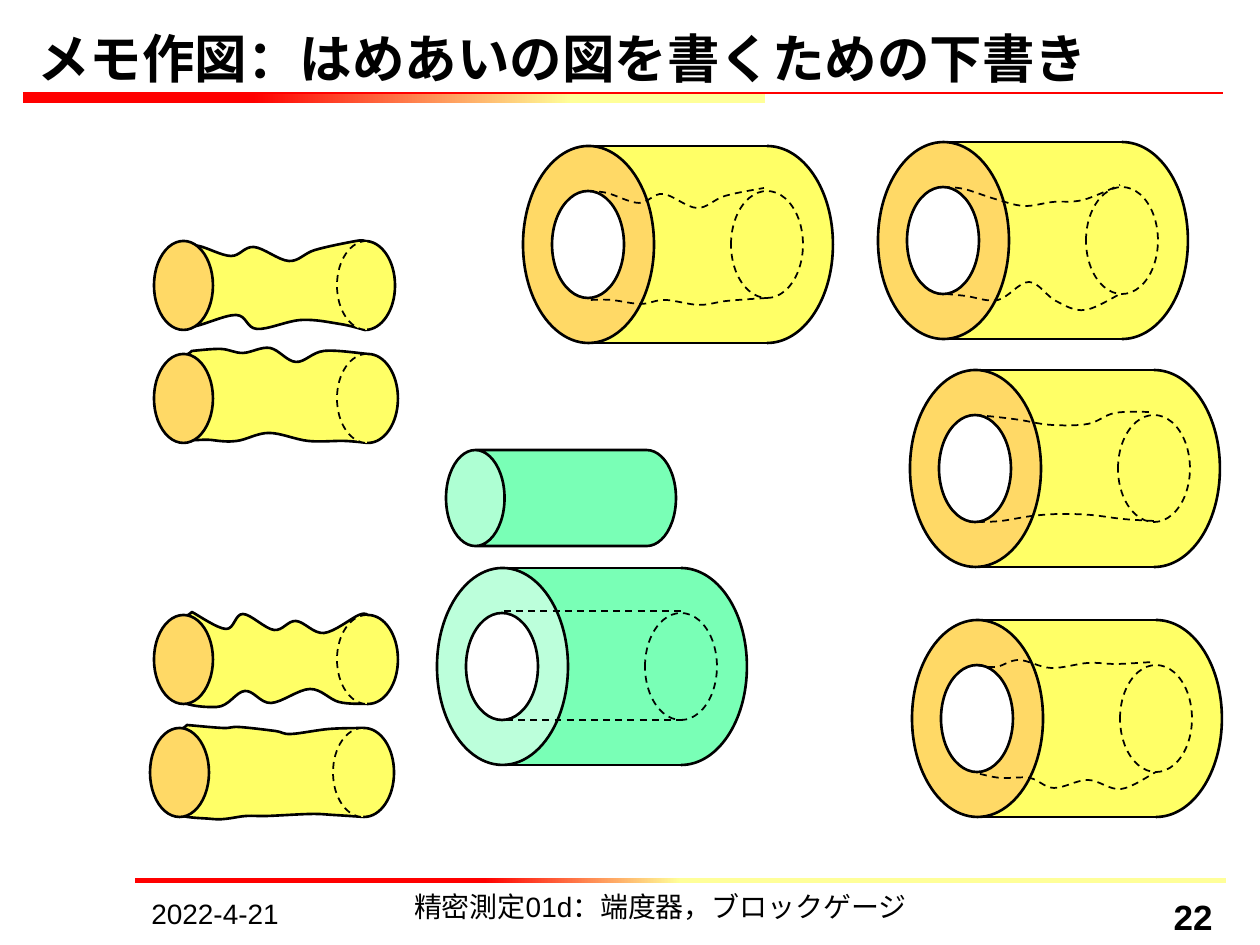
from lxml import etree
from pptx import Presentation
from pptx.dml.color import RGBColor
from pptx.enum.dml import MSO_LINE
from pptx.enum.shapes import MSO_CONNECTOR, MSO_SHAPE
from pptx.enum.text import MSO_ANCHOR, PP_ALIGN
from pptx.oxml.ns import qn
from pptx.util import Emu, Pt

PX = 914400 / 126
RECT, OVAL, CAN = MSO_SHAPE.RECTANGLE, MSO_SHAPE.OVAL, MSO_SHAPE.CAN
LEFT, MID, RIGHT = PP_ALIGN.LEFT, PP_ALIGN.CENTER, PP_ALIGN.RIGHT
TOP, BOTTOM = MSO_ANCHOR.TOP, MSO_ANCHOR.BOTTOM
DASH = MSO_LINE.DASH
BLACK, RED, PALE = "000000", "FF0000", "FFFF99"
YELLOW, AMBER = "FFFF66", "FFD966"
GREEN, MINT = "79FFB6", "BCFFDB"

# Rods: left, top, upper wave, lower wave (left to right, from the rod's corner)
RODS = [
    (154, 354,
     [(38, -3), (67, -5), (89, -1), (116, -6), (142, 8), (170, -3), (214, 0)],
     [(57, 86), (83, 87), (115, 79), (154, 87), (190, 87), (214, 89)]),
    (154, 615,
     [(38, -3), (72, 14), (89, -1), (120, 15), (142, 6), (170, 18), (205, 0), (214, 0)],
     [(63, 92), (91, 76), (117, 88), (156, 74), (185, 87), (214, 89)]),
    (150, 728,
     [(37, -3), (73, 0), (89, -1), (125, 3), (141, 6), (179, 1), (214, 0)],
     [(62, 91), (96, 88), (117, 88), (161, 86), (184, 87), (214, 89)]),
    (154, 241,
     [(25, 4), (45, 5), (77, 15), (100, 6), (135, 20), (161, 9), (202, 0), (211, 0)],
     [(37, 86), (82, 74), (103, 88), (147, 79), (186, 83), (211, 89)]),
]

# Sleeves: left, top, body, face, upper wave, lower wave
SLEEVES = [
    (523, 146, YELLOW, AMBER,
     [(64, 45), (84, 47), (116, 57), (140, 48), (174, 62), (202, 50), (241, 42)],
     [(68, 154), (88, 154), (118, 158), (142, 154), (176, 159), (204, 155), (244, 152)]),
    (912, 620, YELLOW, AMBER,
     [(64, 45), (84, 47), (107, 40), (139, 48), (176, 43), (205, 44), (241, 42)],
     [(68, 154), (89, 158), (118, 158), (142, 168), (176, 160), (209, 169), (244, 152)]),
    (910, 370, YELLOW, AMBER,
     [(65, 45), (86, 47), (110, 50), (141, 55), (178, 54), (205, 43), (241, 42)],
     [(68, 152), (91, 151), (122, 146), (150, 144), (181, 145), (213, 149), (244, 151)]),
    (878, 142, YELLOW, AMBER,
     [(65, 45), (86, 47), (117, 57), (146, 64), (175, 60), (205, 58), (242, 43)],
     [(68, 152), (88, 154), (120, 158), (151, 140), (178, 159), (207, 168), (244, 151)]),
    (437, 568, GREEN, MINT, [(67, 43), (244, 43)], [(69, 152), (246, 152)]),
]


def emu(px):
    return Emu(round(px * PX))


def rgb(code):
    return RGBColor.from_string(code)


def paint(shape, fill=None, width=None, dash=None):
    shape.shadow.inherit = False
    if fill:
        shape.fill.solid()
        shape.fill.fore_color.rgb = rgb(fill)
    else:
        shape.fill.background()
    if width:
        shape.line.color.rgb = rgb(BLACK)
        shape.line.width = Pt(width)
        if dash:
            shape.line.dash_style = dash
    else:
        shape.line.fill.background()


def draw(slide, kind, x, y, w, h, *look):
    shape = slide.shapes.add_shape(kind, emu(x), emu(y), emu(w), emu(h))
    paint(shape, *look)
    return shape


def rule(slide, x1, x2, y, color, width):
    line = slide.shapes.add_connector(
        MSO_CONNECTOR.STRAIGHT, emu(x1), emu(y), emu(x2), emu(y))
    line.line.color.rgb = rgb(color)
    line.line.width = Pt(width)
    etree.SubElement(line._element.spPr, qn("a:effectLst"))


def trace(slide, x, y, points, closed, *look):
    """Bezier outline: a start, then two handles and an end for each part."""
    dots = [(emu(x + a), emu(y + b)) for a, b in points]
    pen = slide.shapes.build_freeform(*dots[0], scale=1.0)
    pen.add_line_segments(dots[1:], close=closed)
    shape = pen.convert_to_shape()
    route = next(shape._element.iter(qn("a:path")))
    legs = route.findall(qn("a:lnTo"))
    for first, second, third in zip(legs[::3], legs[1::3], legs[2::3]):
        bend = etree.Element(qn("a:cubicBezTo"))
        first.addprevious(bend)
        for leg in (first, second, third):
            bend.append(leg[0])
            route.remove(leg)
    paint(shape, *look)


def curve(knots):
    """Smooth Bezier points through the knots."""
    ends = [knots[0], *knots, knots[-1]]
    points = [knots[0]]
    for a, b, c, d in zip(ends, ends[1:], ends[2:], ends[3:]):
        points += [(b[0] + (c[0] - a[0]) / 6, b[1] + (c[1] - a[1]) / 6),
                   (c[0] - (d[0] - b[0]) / 6, c[1] - (d[1] - b[1]) / 6), c]
    return points


def arc(x, w, h):
    """Half ellipse from top to bottom; a negative w bulges left."""
    steps = [(0, 0), (0.55, 0), (1, 0.22), (1, 0.5), (1, 0.78), (0.55, 1), (0, 1)]
    return [(x + a * w, b * h) for a, b in steps]


def rod(slide, x, y, upper, lower):
    back = lower[::-1] + [(18, 79), (20, 18), upper[0]]
    edge = curve(upper) + arc(upper[-1][0], 30, 89)[1:] + curve(back)[1:]
    trace(slide, x, y, edge, True, YELLOW, 1.5)
    draw(slide, OVAL, x, y, 59, 89, AMBER, 1.5)
    trace(slide, x, y, arc(213, -30, 89), False, YELLOW, 1, DASH)


def sleeve(slide, x, y, body, face, upper, lower):
    draw(slide, RECT, x + 65, y, 179, 197, body)
    trace(slide, x, y, arc(244, 66, 197), False, body, 1.5)
    draw(slide, OVAL, x, y, 131, 197, face, 1.5)
    draw(slide, OVAL, x + 29, y + 45, 72, 107, "FFFFFF", 1.5)
    for top in (y, y + 197):
        rule(slide, x + 65, x + 244, top, BLACK, 1.5)
    # Hidden bore
    for wave in (upper, lower):
        trace(slide, x, y, curve(wave), False, None, 1, DASH)
    draw(slide, OVAL, x + 208, y + 45, 72, 107, None, 1, DASH)


def bar(slide, x, y, w, h, pale, red):
    """Bar fading from red to pale; stops are counted from the right."""
    shape = draw(slide, RECT, x, y, w, h)
    shape.fill.gradient()
    shape.fill.gradient_angle = 180
    stops = shape.fill.gradient_stops
    for stop, color, place in zip(stops, (PALE, RED), (pale, red)):
        stop.color.rgb = rgb(color)
        stop.position = place


def label(slide, x, y, w, h, text, size, align, pad=6, bold=False, anchor=TOP):
    frame = slide.shapes.add_textbox(emu(x), emu(y), emu(w), emu(h)).text_frame
    frame.word_wrap = True
    frame.vertical_anchor = anchor
    frame.margin_top = frame.margin_bottom = emu(pad)
    frame.text = text
    para = frame.paragraphs[0]
    para.alignment = align
    font = para.runs[0].font
    font.name, font.size, font.bold = "Arial", Pt(size), bold
    font.color.rgb = rgb(BLACK)


def head(slide):
    bar(slide, 23, 93, 742, 10, 0.26, 0.69)
    rule(slide, 23, 1223, 93, RED, 0.75)
    label(slide, 25, 26, 1201, 63, "メモ作図：はめあいの図を書くための下書き",
          30, LEFT, 0, True, BOTTOM)


def foot(slide):
    bar(slide, 135, 878, 1091, 5, 0.5, 0.68)
    label(slide, 139, 891, 178, 38, "2022-4-21", 16, LEFT)
    label(slide, 333, 890, 655, 37, "精密測定01d：端度器，ブロックゲージ", 16, MID, 0)
    label(slide, 1017, 890, 208, 37, "22", 20, RIGHT, bold=True)


def main():
    deck = Presentation()
    deck.slide_width, deck.slide_height = emu(1260), emu(945)
    slide = deck.slides.add_slide(deck.slide_layouts[6])
    head(slide)
    foot(slide)
    for item in RODS:
        rod(slide, *item)
    for item in SLEEVES:
        sleeve(slide, *item)
    # Ideal shaft above its sleeve
    shaft = draw(slide, CAN, 513, 383, 96, 230, GREEN, 1.5)
    shaft.rotation = 270
    shaft.adjustments[0] = 0.61
    deck.save("out.pptx")


if __name__ == "__main__":
    main()
